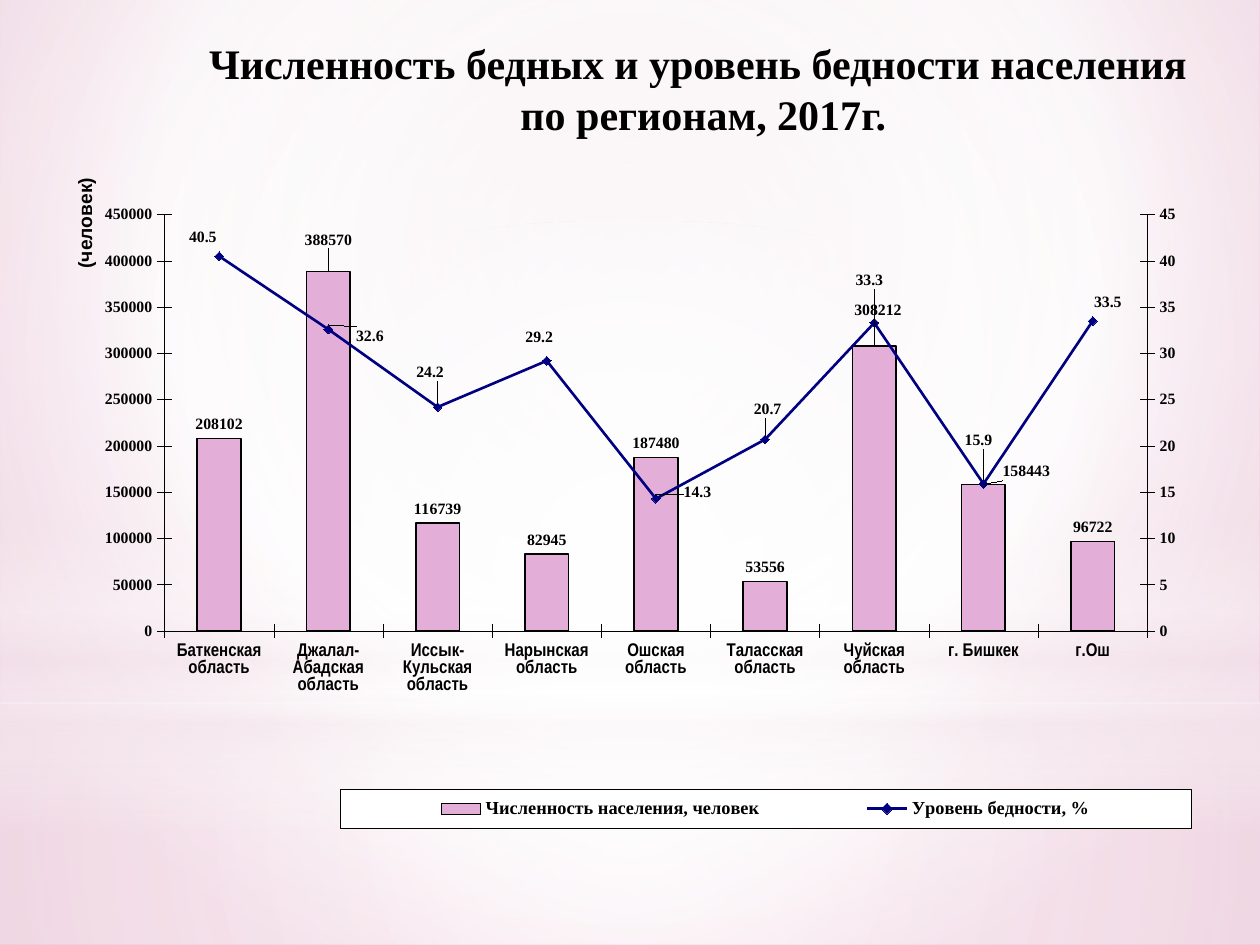
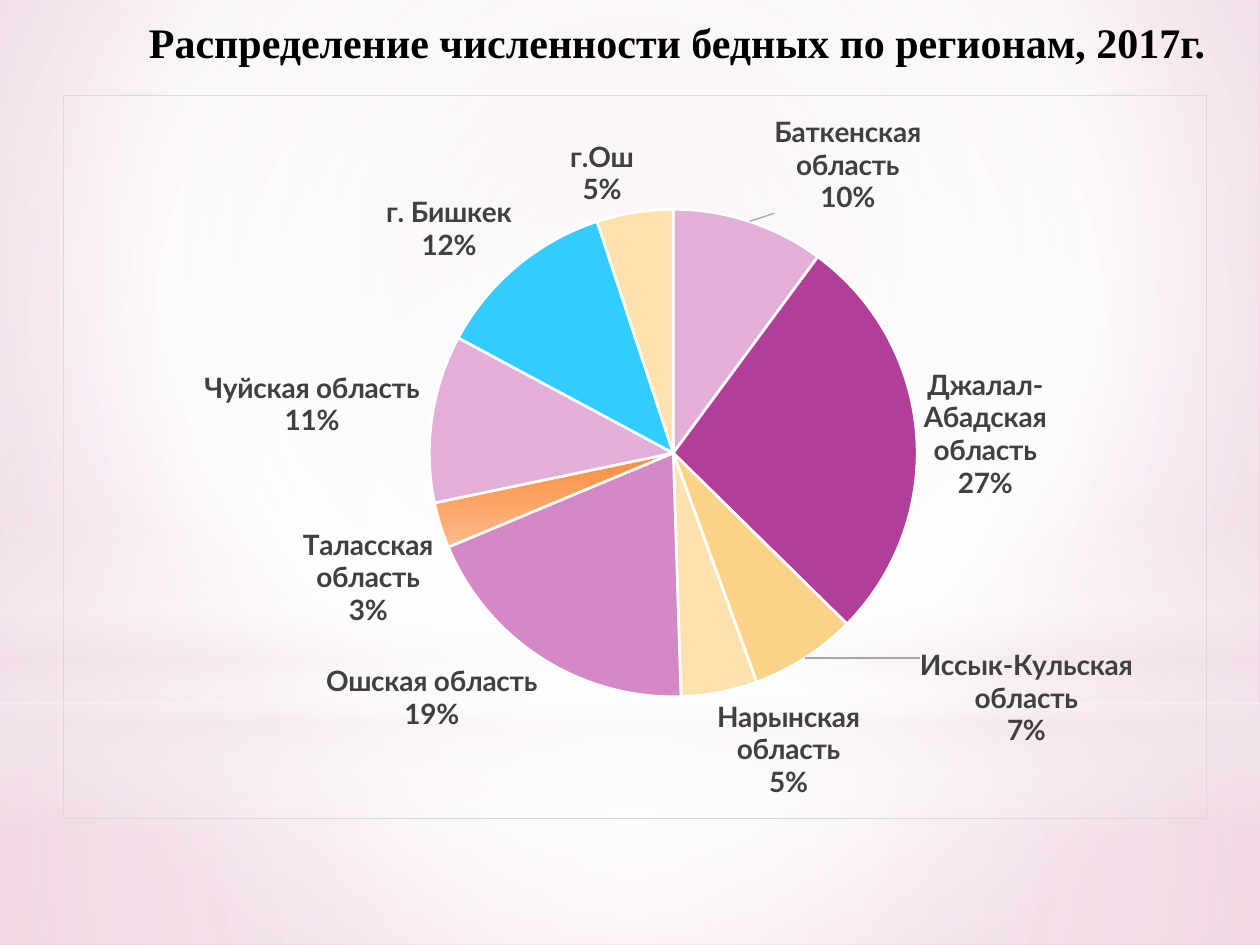
from copy import deepcopy

from pptx import Presentation
from pptx.chart.data import CategoryChartData
from pptx.dml.color import RGBColor
from pptx.enum.chart import (XL_CHART_TYPE, XL_LABEL_POSITION, XL_LEGEND_POSITION,
                             XL_MARKER_STYLE, XL_TICK_MARK)
from pptx.enum.shapes import MSO_SHAPE
from pptx.enum.text import MSO_ANCHOR, PP_ALIGN
from pptx.oxml import parse_xml
from pptx.oxml.ns import nsdecls, qn
from pptx.util import Inches, Pt

# Colours
BLACK = RGBColor(0x00, 0x00, 0x00)
WHITE = RGBColor(0xFF, 0xFF, 0xFF)
GREY = RGBColor(0x40, 0x40, 0x40)
LEADER = RGBColor(0xA6, 0xA6, 0xA6)
BORDER = RGBColor(0xD9, 0xD9, 0xD9)
NAVY = RGBColor(0x00, 0x00, 0x80)
PINK = RGBColor(0xE3, 0xAF, 0xD8)
PURPLE = RGBColor(0xB1, 0x3F, 0x9A)
ORCHID = RGBColor(0xD4, 0x88, 0xC5)
SAND = RGBColor(0xFB, 0xD3, 0x88)
CREAM = RGBColor(0xFD, 0xE2, 0xB0)
ORANGE = RGBColor(0xFA, 0x8D, 0x3D)
PEACH = RGBColor(0xFC, 0xBB, 0x8B)
SKY = RGBColor(0x33, 0xCC, 0xFF)
ROSE = RGBColor(0xED, 0xDA, 0xE2)
DEEP_ROSE = RGBColor(0xE0, 0x9D, 0xBC)
BLUSH = RGBColor(0xF4, 0xE7, 0xED)

# Radial gradients: focus is left, top, right, bottom in percent
CENTRE = (50, 50, 50, 50)
BACKDROP = [(0, ROSE, 100), (60, WHITE, 100), (100, DEEP_ROSE, 100)]

# Veils over the background: shape, top, height, stops (place, colour, opacity), focus
VEILS = [
    (MSO_SHAPE.RECTANGLE, 5.58, 1.92, [(0, WHITE, 91), (37, WHITE, 76), (100, BLUSH, 79)], CENTRE),
    (MSO_SHAPE.RECTANGLE, 0, 5.58, [(0, WHITE, 89), (48, WHITE, 62), (100, BLUSH, 79)], CENTRE),
    (MSO_SHAPE.RECTANGLE, 4.12, 2.5, [(0, WHITE, 0), (29, WHITE, 30), (45, BLUSH, 40),
                                      (55, WHITE, 26), (65, BLUSH, 60), (100, WHITE, 0)], None),
    (MSO_SHAPE.OVAL, 1.75, 5.58, [(0, WHITE, 100), (56, WHITE, 0)], CENTRE),
]

# Data
REGIONS = ["Баткенская область", "Джалал-Абадская область", "Иссык-Кульская область",
           "Нарынская область", "Ошская область", "Таласская область",
           "Чуйская область", "г. Бишкек", "г.Ош"]
POOR_PEOPLE = [208102, 388570, 116739, 82945, 187480, 53556, 308212, 158443, 96722]
POVERTY_RATE = [40.5, 32.6, 24.2, 29.2, 14.3, 20.7, 33.3, 15.9, 33.5]
SHARES = [10, 27, 7, 5, 19, 3, 11, 12, 5]
SLICE_COLOURS = [PINK, PURPLE, SAND, CREAM, ORCHID, ORANGE, PINK, SKY, CREAM]
TALAS = 5

# Label shifts from the default place, in inches, by point
PEOPLE_SHIFTS = {1: (0, -0.14), 6: (0.03, -0.17), 7: (0.34, 0.01)}
RATE_SHIFTS = {0: (-0.13, 0), 1: (0.33, 0.2), 2: (-0.06, -0.13), 3: (-0.06, -0.04),
               4: (0.33, 0.1), 5: (0.02, -0.09), 6: (-0.04, -0.19), 7: (-0.04, -0.2),
               8: (0.12, 0)}
SHARE_SHIFTS = {0: (0.18, -0.01), 2: (0.88, -0.13), 3: (-0.03, 0), 6: (-0.04, 0.15)}


def set_gradient(fill, owner, stops, focus):
    """Give the fill found inside owner a radial or a top-down gradient."""
    fill.gradient()
    gradient = next(owner.iter(qn("a:gradFill")))
    stop_xml = "".join(
        f'<a:gs pos="{place * 1000}"><a:srgbClr val="{colour}">'
        f'<a:alpha val="{opacity * 1000}"/></a:srgbClr></a:gs>'
        for place, colour, opacity in stops)
    if focus:
        left, top, right, bottom = (side * 1000 for side in focus)
        course = (f'<a:path path="circle"><a:fillToRect l="{left}" t="{top}" '
                  f'r="{right}" b="{bottom}"/></a:path>')
    else:
        course = '<a:lin ang="5400000" scaled="0"/>'
    gradient.getparent().replace(gradient, parse_xml(
        f'<a:gradFill rotWithShape="1" {nsdecls("a")}><a:gsLst>{stop_xml}</a:gsLst>'
        f'{course}</a:gradFill>'))


def set_font(font, name, size, colour=BLACK, bold=True):
    font.name, font.size, font.bold = name, Pt(size), bold
    font.color.rgb = colour


def set_line(line, colour, width):
    line.color.rgb = colour
    line.width = Pt(width)


def layout_xml(x, y, size=None, inner=False):
    """Manual layout in fractions of the chart; without a size it is a shift."""
    target = '<c:layoutTarget val="inner"/>' if inner else ""
    modes, extent = "", ""
    if size:
        modes = '<c:xMode val="edge"/><c:yMode val="edge"/>'
        extent = f'<c:w val="{size[0]}"/><c:h val="{size[1]}"/>'
    return parse_xml(f'<c:layout {nsdecls("c")}><c:manualLayout>{target}{modes}'
                     f'<c:x val="{x:.4f}"/><c:y val="{y:.4f}"/>{extent}'
                     f'</c:manualLayout></c:layout>')


def frame_xml(fill, colour, width):
    return parse_xml(f'<c:spPr {nsdecls("c", "a")}>{fill}<a:ln w="{Pt(width)}"><a:solidFill>'
                     f'<a:srgbClr val="{colour}"/></a:solidFill></a:ln></c:spPr>')


class Deck:
    TITLE_FONT = "Times New Roman"

    def __init__(self):
        self.presentation = Presentation()
        self.presentation.slide_width = Inches(10)
        self.presentation.slide_height = Inches(7.5)
        master = self.presentation.slide_master
        set_gradient(master.background.fill, master.element, BACKDROP, (20, 10, 20, 60))
        self.slide = None

    def new_slide(self):
        self.slide = self.presentation.slides.add_slide(self.presentation.slide_layouts[6])
        for kind, top, height, stops, focus in VEILS:
            shape = self.slide.shapes.add_shape(kind, 0, Inches(top), Inches(10), Inches(height))
            shape.shadow.inherit = False
            shape.line.fill.background()
            set_gradient(shape.fill, shape.element, stops, focus)

    def text(self, text, left, top, width, height, font, size, align=PP_ALIGN.LEFT):
        box = self.slide.shapes.add_textbox(Inches(left), Inches(top),
                                            Inches(width), Inches(height))
        frame = box.text_frame
        frame.word_wrap = True
        frame.vertical_anchor = MSO_ANCHOR.TOP
        paragraph = frame.paragraphs[0]
        paragraph.text = text
        paragraph.alignment = align
        set_font(paragraph.font, font, size)
        return box

    def title(self, text, left, top, width):
        self.text(text, left, top, width, 0.92, self.TITLE_FONT, 24, PP_ALIGN.CENTER)

    def vertical_text(self, text, left, top, width, height):
        box = self.text(text, left, top, width, height, "Arial", 11)
        next(box.element.iter(qn("a:bodyPr"))).set("vert", "vert270")

    def chart(self, kind, series, left, top, width, height, font, plot):
        data = CategoryChartData()
        data.categories = REGIONS
        for name, values in series:
            data.add_series(name, values)
        chart = self.slide.shapes.add_chart(kind, Inches(left), Inches(top), Inches(width),
                                            Inches(height), data).chart
        chart.has_title = False
        chart.has_legend = False
        set_font(chart.font, font, 10, bold=False)
        area = next(chart.element.iter(qn("c:plotArea")))
        for old in area.findall(qn("c:layout")):
            area.remove(old)
        area.insert(0, layout_xml(plot[0], plot[1], plot[2:], inner=True))
        return chart

    def axis(self, axis, font, size):
        axis.has_major_gridlines = False
        axis.major_tick_mark = XL_TICK_MARK.CROSS
        axis.minor_tick_mark = XL_TICK_MARK.NONE
        set_line(axis.format.line, BLACK, 0.25)
        set_font(axis.tick_labels.font, font, size)

    def legend(self, chart, x, y, width, height):
        chart.has_legend = True
        legend = chart.legend
        legend.position = XL_LEGEND_POSITION.BOTTOM
        legend.include_in_layout = False
        set_font(legend.font, self.TITLE_FONT, 10.5)
        element = next(chart.element.iter(qn("c:legend")))
        for old in element.findall(qn("c:layout")):
            element.remove(old)
        element.find(qn("c:legendPos")).addnext(layout_xml(x, y, (width, height)))
        white = f'<a:solidFill><a:srgbClr val="{WHITE}"/></a:solidFill>'
        element.find(qn("c:overlay")).addnext(frame_xml(white, BLACK, 0.25))

    def labels(self, series, position, number_format, font, size, colour=BLACK):
        labels = series.data_labels
        labels.show_value = True
        labels.position = position
        labels.number_format = number_format
        labels.number_format_is_linked = False
        set_font(labels.font, font, size, colour)
        return labels

    def shift_labels(self, chart, width, height, *shifts_by_series):
        """Move single labels; each takes its look from the labels of its series."""
        for labels, shifts in zip(list(chart.element.iter(qn("c:dLbls"))), shifts_by_series):
            shared = [child for child in labels if child.tag != qn("c:showLeaderLines")]
            for place, (point, (dx, dy)) in enumerate(shifts.items()):
                label = parse_xml(f'<c:dLbl {nsdecls("c")}><c:idx val="{point}"/></c:dLbl>')
                label.append(layout_xml(dx / width, dy / height))
                label.extend(deepcopy(child) for child in shared)
                labels.insert(place, label)

    def hide_leader_lines(self, chart):
        for labels in chart.element.iter(qn("c:dLbls")):
            for leader in labels.findall(qn("c:showLeaderLines")):
                labels.remove(leader)
            labels.append(parse_xml(
                f'<c:extLst {nsdecls("c")}><c:ext uri="{{CE6537A1-D6FC-4f65-9D91-7224C49458BB}}" '
                'xmlns:c15="http://schemas.microsoft.com/office/drawing/2012/chart">'
                '<c15:showLeaderLines val="0"/></c:ext></c:extLst>'))

    def show_leader_lines(self, chart):
        labels = next(chart.element.iter(qn("c:dLbls")))
        for leader in labels.findall(qn("c:showLeaderLines")):
            labels.remove(leader)
        labels.append(parse_xml(f'<c:showLeaderLines {nsdecls("c")} val="1"/>'))
        leader_lines = parse_xml(f'<c:leaderLines {nsdecls("c")}/>')
        leader_lines.append(frame_xml("", LEADER, 0.75))
        labels.append(leader_lines)

    def move_to_right_axis(self, chart, maximum, unit):
        """Turn the last column series into a line on a second value axis."""
        area = next(chart.element.iter(qn("c:plotArea")))
        bars = area.find(qn("c:barChart"))
        series = bars.findall(qn("c:ser"))[-1]
        for extra in series.findall(qn("c:invertIfNegative")):
            series.remove(extra)
        line = parse_xml(f'<c:lineChart {nsdecls("c")}><c:grouping val="standard"/>'
                         '<c:varyColors val="0"/><c:marker val="1"/>'
                         '<c:axId val="5001"/><c:axId val="5002"/></c:lineChart>')
        line.insert(2, series)
        bars.addnext(line)
        value_axis = area.find(qn("c:valAx"))
        right, hidden = deepcopy(value_axis), deepcopy(area.find(qn("c:catAx")))
        for axis, own, other in ((hidden, "5001", "5002"), (right, "5002", "5001")):
            axis.find(qn("c:axId")).set("val", own)
            axis.find(qn("c:crossAx")).set("val", other)
        hidden.find(qn("c:delete")).set("val", "1")
        right.find(qn("c:axPos")).set("val", "r")
        right.find(qn("c:crosses")).set("val", "max")
        next(right.iter(qn("c:max"))).set("val", str(maximum))
        right.find(qn("c:majorUnit")).set("val", str(unit))
        value_axis.addnext(right)
        right.addnext(hidden)


def add_poverty_slide(deck):
    deck.new_slide()
    deck.title("Численность бедных и уровень бедности населения\v по регионам, 2017г.",
               1.33, 0.25, 8.42)
    deck.vertical_text("(человек)", 0.53, 1.2, 0.39, 1.03)
    width, height = 9.33, 5.34
    chart = deck.chart(
        XL_CHART_TYPE.COLUMN_CLUSTERED,
        [("Численность населения, человек", POOR_PEOPLE), ("Уровень бедности, %", POVERTY_RATE)],
        0.42, 1.33, width, height, "Arial", (0.095, 0.07, 0.836, 0.619))

    # Axes
    deck.axis(chart.category_axis, "Arial Narrow", 10.5)
    category_text = next(chart.element.iter(qn("c:catAx"))).find(qn("c:txPr"))
    category_text.find(qn("a:bodyPr")).set("rot", "0")
    category_text.find(qn("a:bodyPr")).set("vert", "horz")
    values = chart.value_axis
    deck.axis(values, deck.TITLE_FONT, 9)
    values.minimum_scale, values.maximum_scale, values.major_unit = 0, 450000, 50000
    values.tick_labels.number_format = "0"
    values.tick_labels.number_format_is_linked = False
    deck.move_to_right_axis(chart, 45, 5)

    # Columns and line
    columns, line = chart.plots
    columns.gap_width = 150
    columns.vary_by_categories = False
    people, rate = columns.series[0], line.series[0]
    people.format.fill.solid()
    people.format.fill.fore_color.rgb = PINK
    set_line(people.format.line, BLACK, 1)
    rate.smooth = False
    set_line(rate.format.line, NAVY, 1.5)
    rate.marker.style = XL_MARKER_STYLE.DIAMOND
    rate.marker.size = 5
    rate.marker.format.fill.solid()
    rate.marker.format.fill.fore_color.rgb = NAVY
    set_line(rate.marker.format.line, NAVY, 0.75)

    # Labels and legend
    deck.labels(people, XL_LABEL_POSITION.OUTSIDE_END, "0", deck.TITLE_FONT, 9)
    deck.labels(rate, XL_LABEL_POSITION.ABOVE, "0.0", deck.TITLE_FONT, 9)
    deck.shift_labels(chart, width, height, PEOPLE_SHIFTS, RATE_SHIFTS)
    deck.hide_leader_lines(chart)
    deck.legend(chart, 0.244, 0.924, 0.724, 0.058)


def add_shares_slide(deck):
    deck.new_slide()
    deck.title("Распределение численности бедных по регионам, 2017г.", 1, 0.08, 8.75)
    width, height = 9.08, 5.75
    chart = deck.chart(XL_CHART_TYPE.PIE, [("Series 1", SHARES)], 0.5, 0.75, width, height,
                       "Lato", (0.32, 0.158, 0.427, 0.674))
    chart.element.find(qn("c:chart")).addnext(frame_xml("<a:noFill/>", BORDER, 0.75))

    # Slices
    series = chart.plots[0].series[0]
    for index, colour in enumerate(SLICE_COLOURS):
        slice_format = series.points[index].format
        slice_format.fill.solid()
        slice_format.fill.fore_color.rgb = colour
        set_line(slice_format.line, WHITE, 1.5)
    talas_fill = series.points[TALAS].format.fill
    talas_fill.gradient()
    talas_fill.gradient_angle = 270
    for stop, colour in zip(talas_fill.gradient_stops, (ORANGE, PEACH)):
        stop.color.rgb = colour

    # Labels
    labels = deck.labels(series, XL_LABEL_POSITION.OUTSIDE_END, "0%", "Lato", 16, GREY)
    labels.show_value = False
    labels.show_category_name = True
    labels.show_percentage = True
    element = next(chart.element.iter(qn("c:dLbls")))
    last_flag = [child for child in element if child.tag != qn("c:showLeaderLines")][-1]
    last_flag.addnext(parse_xml(f'<c:separator {nsdecls("c")}>\n</c:separator>'))
    deck.shift_labels(chart, width, height, SHARE_SHIFTS)
    deck.show_leader_lines(chart)


def main():
    deck = Deck()
    add_poverty_slide(deck)
    add_shares_slide(deck)
    deck.presentation.save("out.pptx")


if __name__ == "__main__":
    main()
